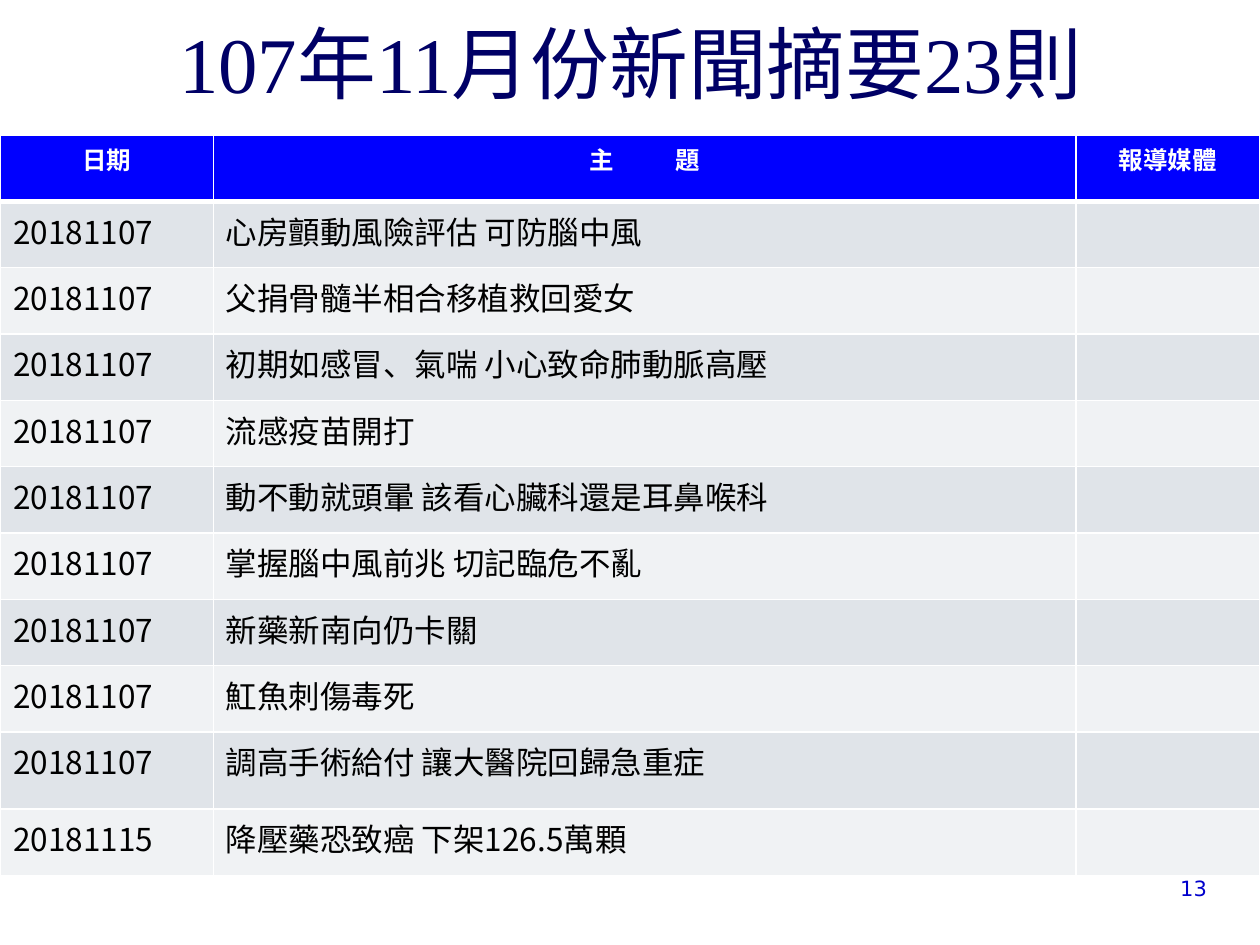
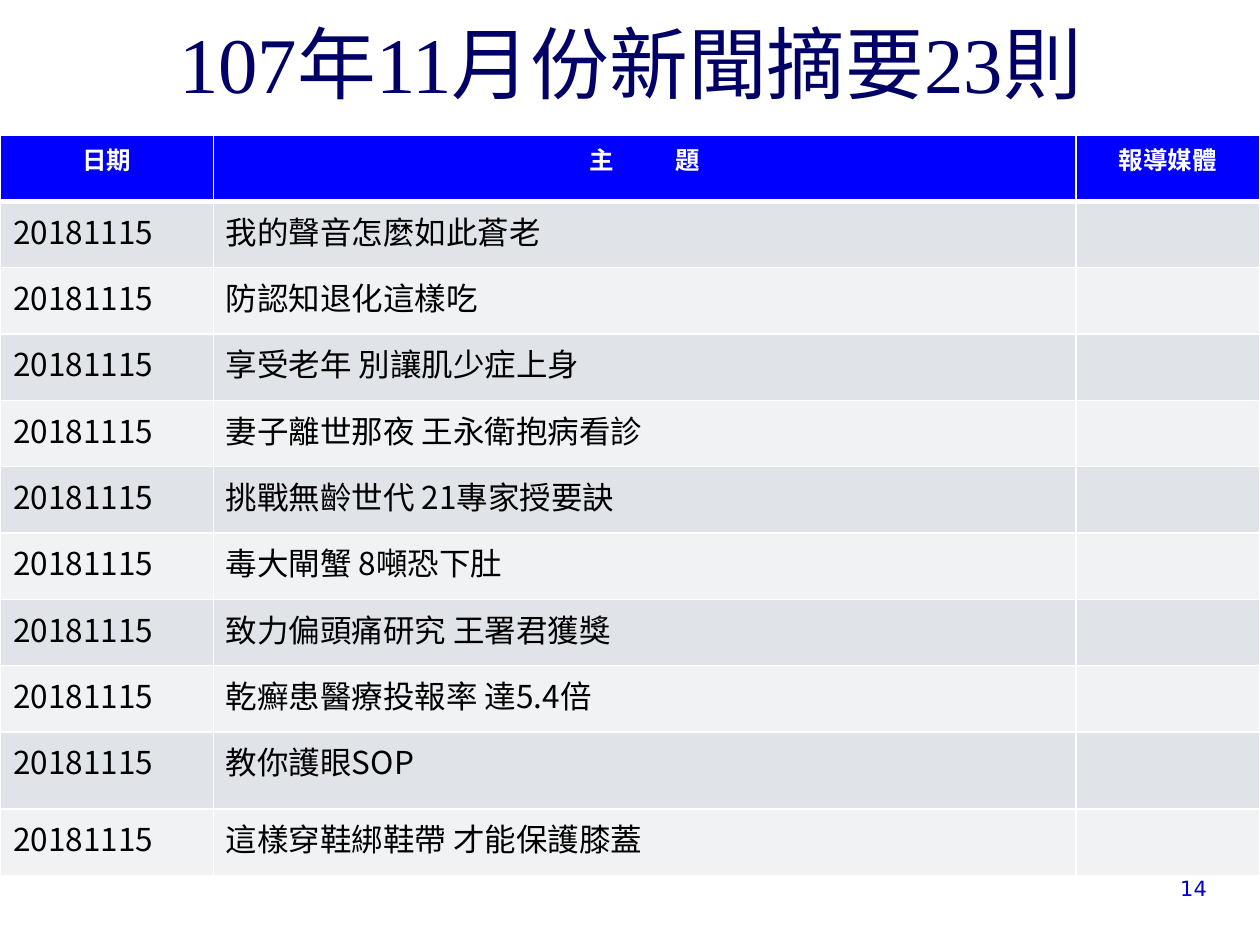
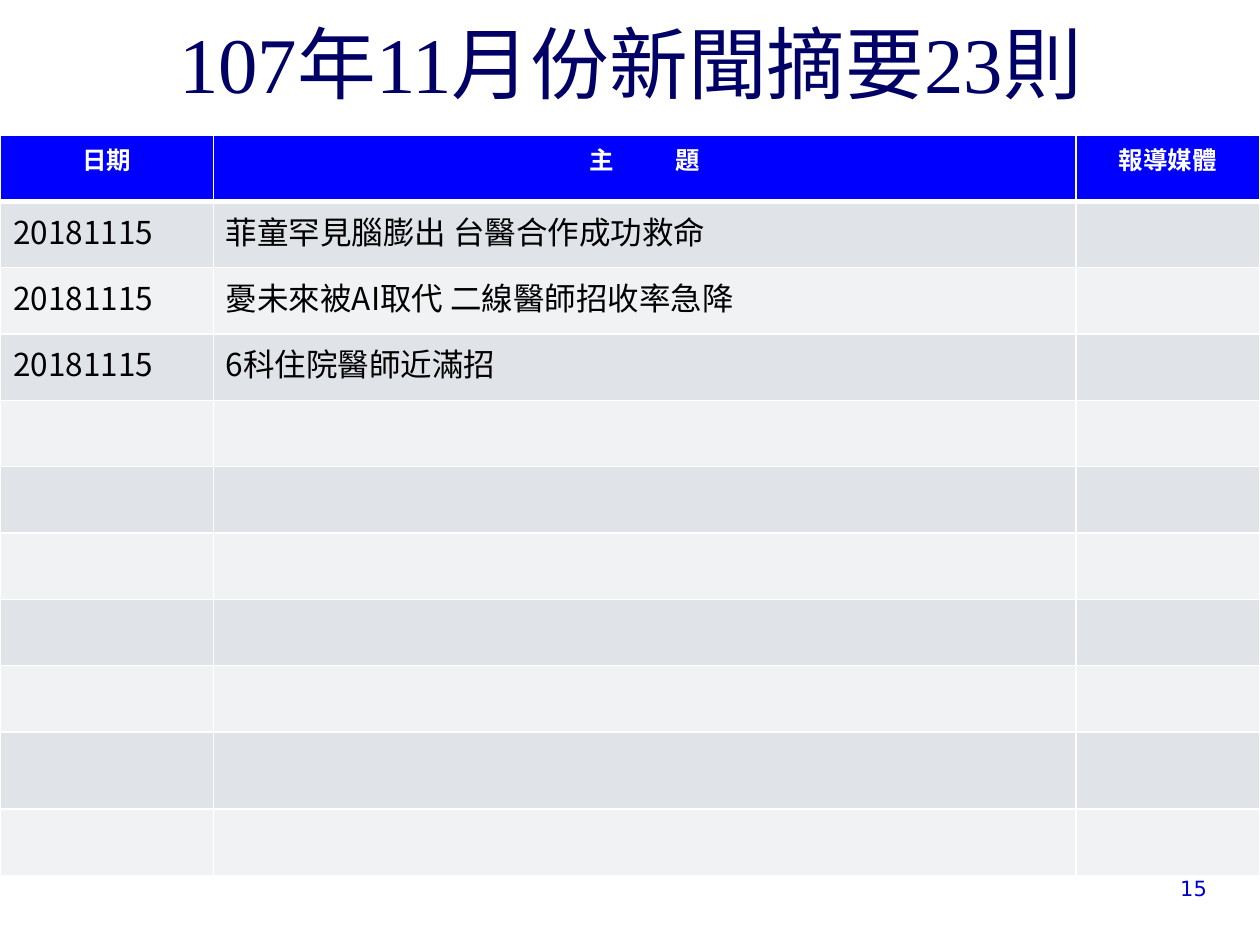
from lxml import etree
from pptx import Presentation
from pptx import util as u
from pptx.dml import color
from pptx.enum import text
from pptx.oxml import ns

HEADLINE = "107年11月份新聞摘要23則"
TITLE_FONT, TABLE_FONT, NUMBER_FONT = "Times New Roman", "Noto Sans CJK SC", "DejaVu Sans"
NAVY, NUMBER_BLUE, HEADER_BLUE = "000066", "0000CC", "0000FF"
WHITE, BLACK = "FFFFFF", "000000"
BANDS = ("F0F2F4", "E0E4E9")
HEADERS = ("日期", "主 題", "報導媒體")
COLUMN_WIDTHS = (121.5, 493, 104.8)
ROW_HEIGHTS = [37.9] * 9 + [44, 37.9]
FIRST_PAGE = 13

NEWS_PAGES = [
    [
        ("20181107", "心房顫動風險評估 可防腦中風"),
        ("20181107", "父捐骨髓半相合移植救回愛女"),
        ("20181107", "初期如感冒、氣喘 小心致命肺動脈高壓"),
        ("20181107", "流感疫苗開打"),
        ("20181107", "動不動就頭暈 該看心臟科還是耳鼻喉科"),
        ("20181107", "掌握腦中風前兆 切記臨危不亂"),
        ("20181107", "新藥新南向仍卡關"),
        ("20181107", "魟魚刺傷毒死"),
        ("20181107", "調高手術給付 讓大醫院回歸急重症"),
        ("20181115", "降壓藥恐致癌 下架126.5萬顆"),
    ],
    [
        ("20181115", "我的聲音怎麼如此蒼老"),
        ("20181115", "防認知退化這樣吃"),
        ("20181115", "享受老年 別讓肌少症上身"),
        ("20181115", "妻子離世那夜 王永衛抱病看診"),
        ("20181115", "挑戰無齡世代 21專家授要訣"),
        ("20181115", "毒大閘蟹 8噸恐下肚"),
        ("20181115", "致力偏頭痛研究 王署君獲獎"),
        ("20181115", "乾癬患醫療投報率 達5.4倍"),
        ("20181115", "教你護眼SOP"),
        ("20181115", "這樣穿鞋綁鞋帶 才能保護膝蓋"),
    ],
    [
        ("20181115", "菲童罕見腦膨出 台醫合作成功救命"),
        ("20181115", "憂未來被AI取代 二線醫師招收率急降"),
        ("20181115", "6科住院醫師近滿招"),
    ],
]


def rgb(hex_color):
    return color.RGBColor.from_string(hex_color)


def style_run(run, font_name, size, hex_color, bold=False):
    run.font.name = font_name
    run.font.size = u.Pt(size)
    run.font.bold = bold
    run.font.color.rgb = rgb(hex_color)


def add_label(slide, box, words, font_name, size, hex_color, align, anchor):
    frame = slide.shapes.add_textbox(*map(u.Pt, box)).text_frame
    frame.word_wrap = True
    frame.auto_size = text.MSO_AUTO_SIZE.NONE
    frame.vertical_anchor = anchor
    paragraph = frame.paragraphs[0]
    paragraph.text = words
    paragraph.alignment = align
    style_run(paragraph.runs[0], font_name, size, hex_color)


def set_borders(cell, top=1, bottom=1):
    properties = cell._tc.get_or_add_tcPr()
    widths = {"a:lnL": 1, "a:lnR": 1, "a:lnT": top, "a:lnB": bottom}
    for position, (side, width) in enumerate(widths.items()):
        border = etree.Element(ns.qn(side), w=str(u.Pt(width)))
        fill = etree.SubElement(border, ns.qn("a:solidFill"))
        etree.SubElement(fill, ns.qn("a:srgbClr"), val=WHITE)
        properties.insert(position, border)


def fill_cell(cell, words, fill_color, size, hex_color, bold=False):
    cell.fill.solid()
    cell.fill.fore_color.rgb = rgb(fill_color)
    cell.text_frame.text = words
    paragraph = cell.text_frame.paragraphs[0]
    paragraph.font.size = u.Pt(size)
    for run in paragraph.runs:
        style_run(run, TABLE_FONT, size, hex_color, bold)
        east_asian = etree.SubElement(run.font._element, ns.qn("a:ea"))
        east_asian.set("typeface", TABLE_FONT)
        if bold:
            paragraph.alignment = text.PP_ALIGN.CENTER


def spread_letters(cell, points):
    run = cell.text_frame.paragraphs[0].runs[0]
    run.font._element.set("spc", str(points * 100))


def add_news_table(slide, news):
    table = slide.shapes.add_table(
        len(ROW_HEIGHTS), len(HEADERS), u.Pt(0.4), u.Pt(77.2),
        u.Pt(sum(COLUMN_WIDTHS)), u.Pt(sum(ROW_HEIGHTS))).table
    for column, width in zip(table.columns, COLUMN_WIDTHS):
        column.width = u.Pt(width)
    for row, height in zip(table.rows, ROW_HEIGHTS):
        row.height = u.Pt(height)

    for column, header in enumerate(HEADERS):
        cell = table.cell(0, column)
        fill_cell(cell, header, HEADER_BLUE, 14, WHITE, bold=True)
        set_borders(cell, bottom=3)
    spread_letters(table.cell(0, 1), 16)

    for row in range(1, len(ROW_HEIGHTS)):
        item = news[row - 1] if row <= len(news) else ("", "")
        for column, words in enumerate((*item, "")):
            cell = table.cell(row, column)
            fill_cell(cell, words, BANDS[row % 2], 18, BLACK)
            set_borders(cell, top=3 if row == 1 else 1)


def add_news_slide(deck, page, news):
    slide = deck.slides.add_slide(deck.slide_layouts[6])
    add_label(slide, (45.3, 24.1, 630, 41.8), HEADLINE, TITLE_FONT, 45, NAVY,
              text.PP_ALIGN.CENTER, text.MSO_ANCHOR.BOTTOM)
    add_news_table(slide, news)
    add_label(slide, (643.5, 496.8, 53.3, 21.6), str(page), NUMBER_FONT, 12,
              NUMBER_BLUE, text.PP_ALIGN.RIGHT, text.MSO_ANCHOR.TOP)


def main():
    deck = Presentation()
    deck.slide_width, deck.slide_height = u.Pt(720), u.Pt(540)
    for page, news in enumerate(NEWS_PAGES, FIRST_PAGE):
        add_news_slide(deck, page, news)
    deck.save("out.pptx")


if __name__ == "__main__":
    main()
